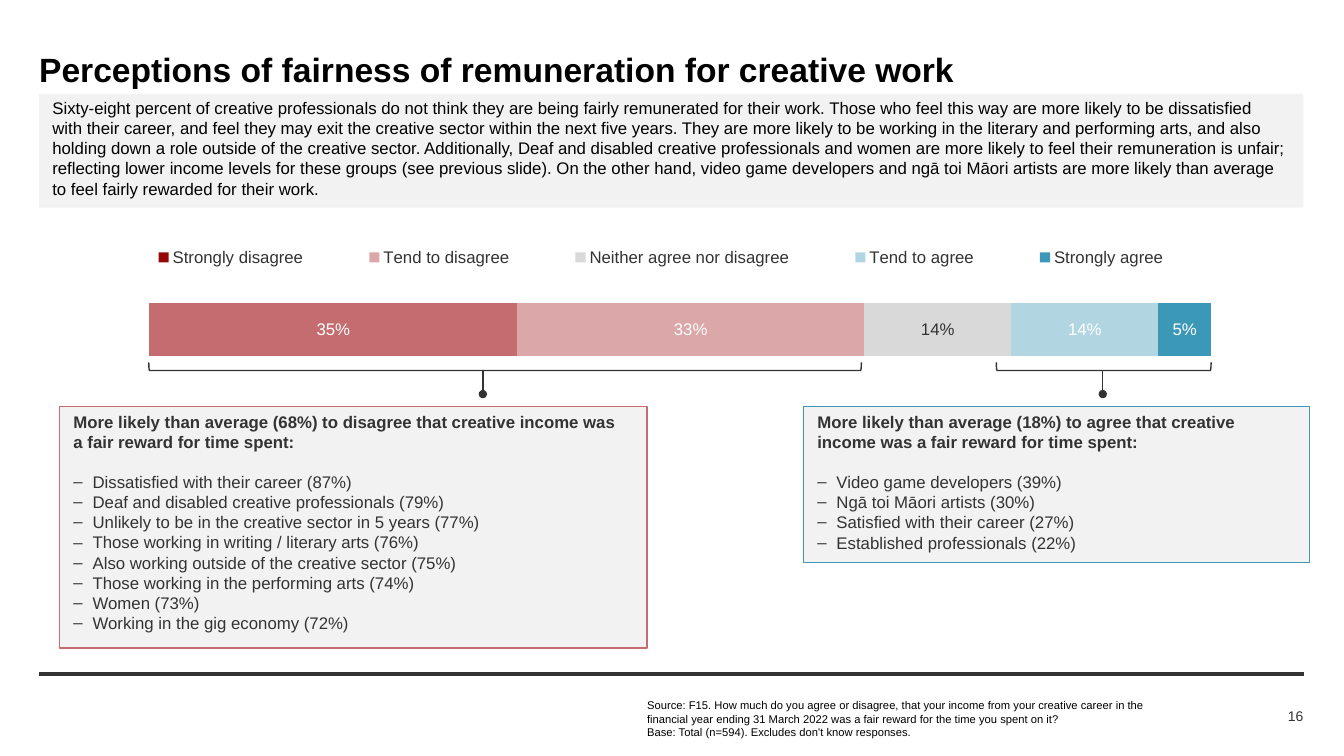
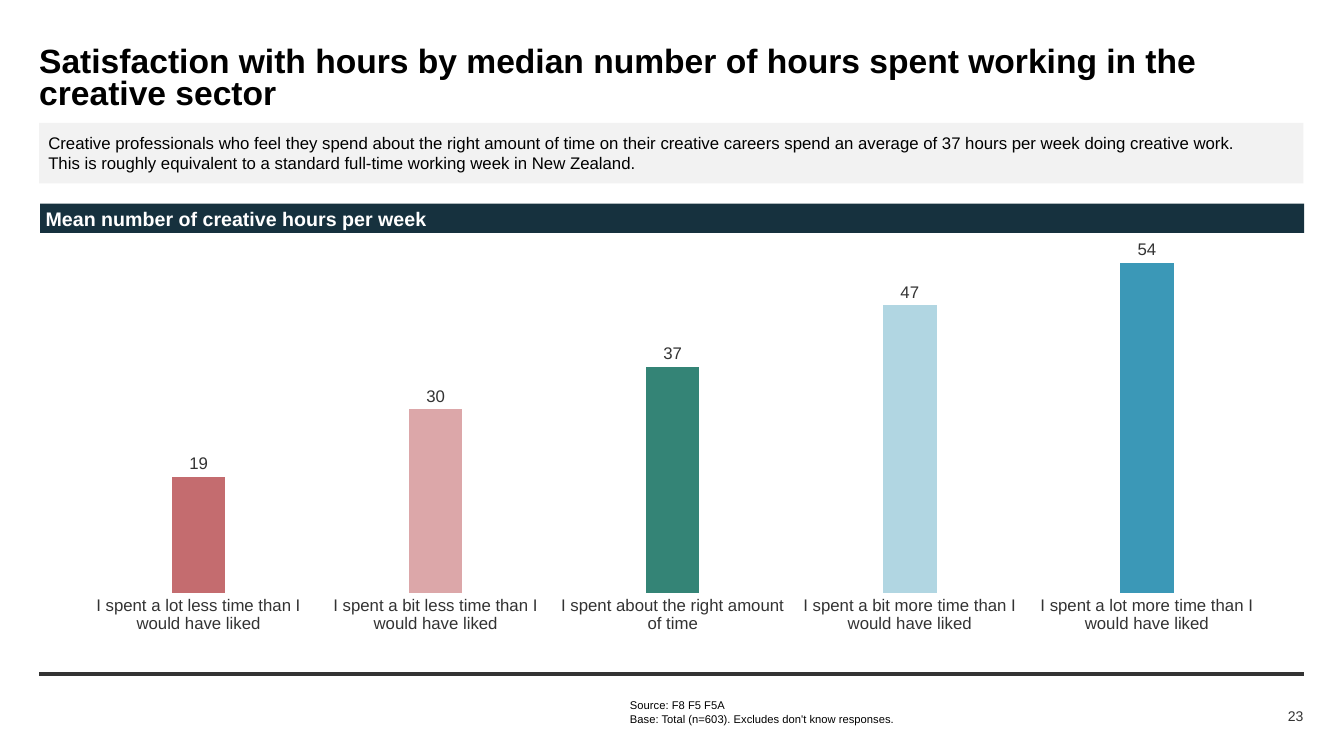
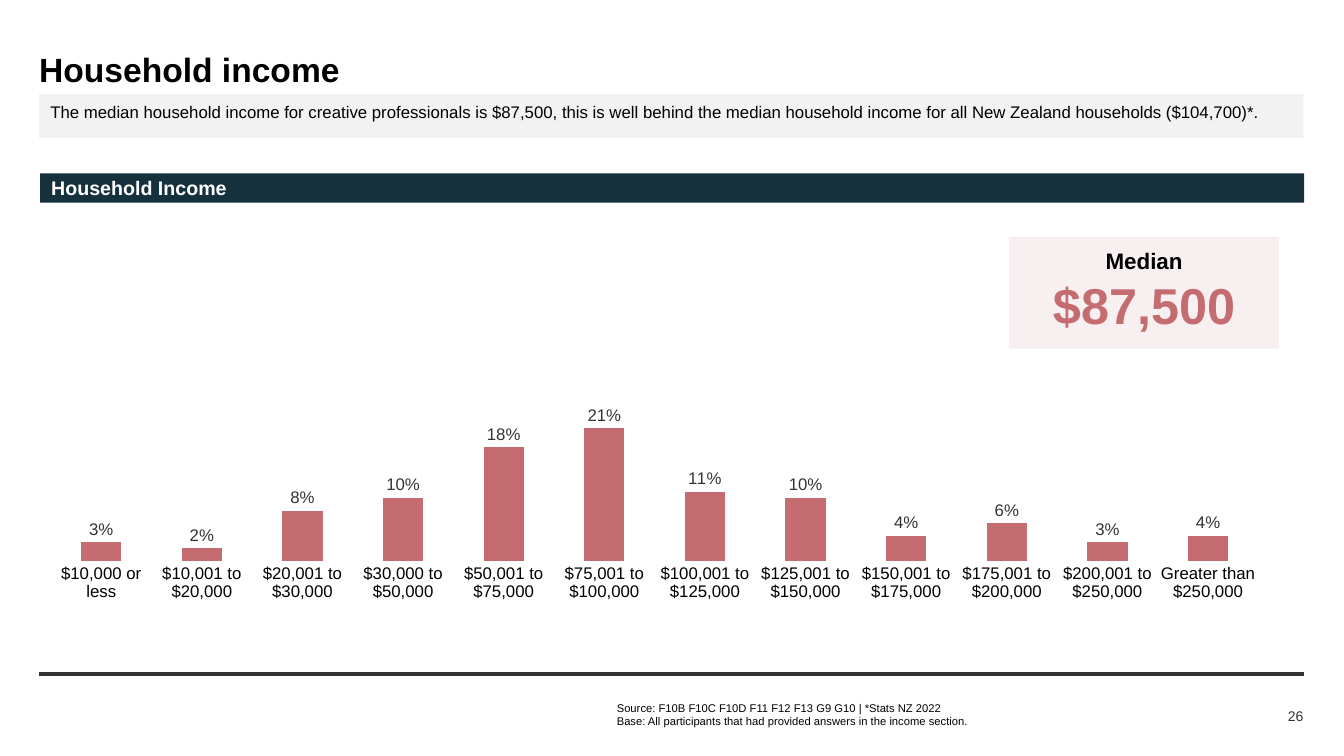
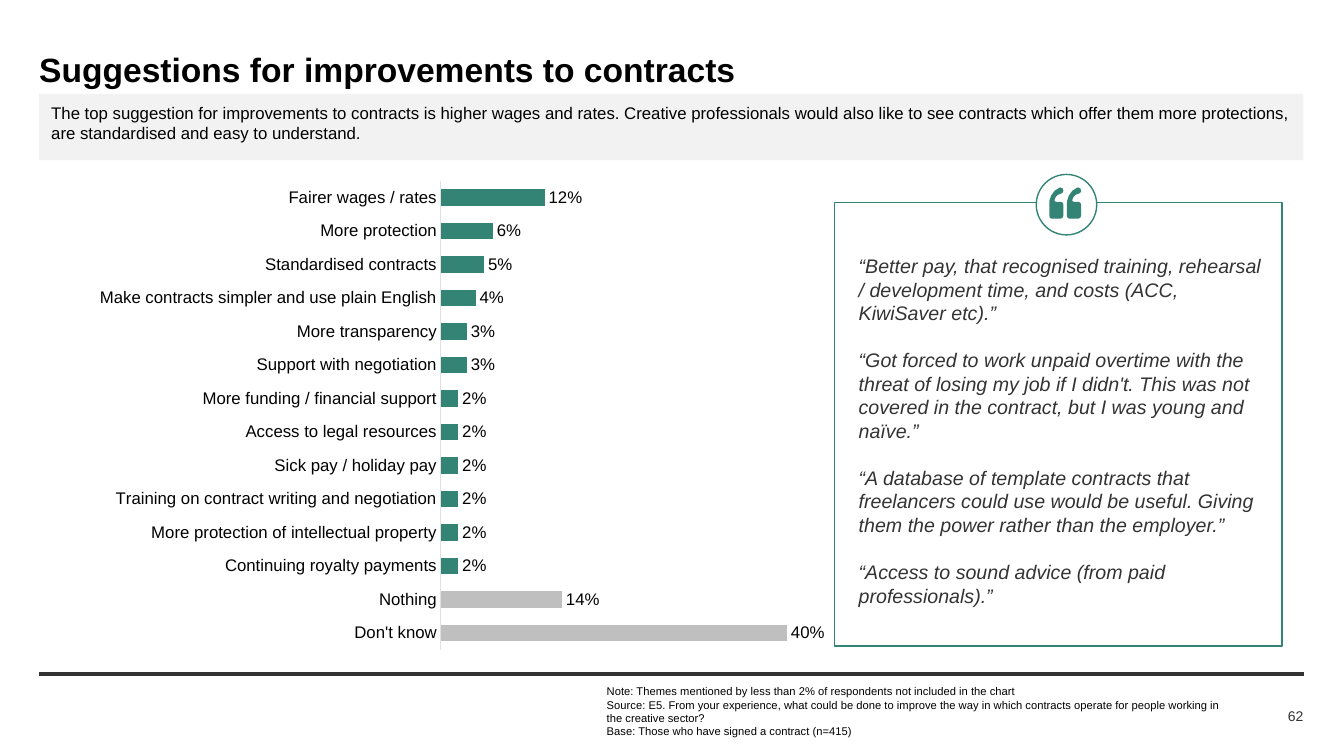
"""Build four slides on the pay, hours, income and contracts of creative professionals."""

from lxml.etree import SubElement
from pptx import Presentation
from pptx.chart.data import CategoryChartData
from pptx.dml.color import RGBColor
from pptx.enum.chart import XL_CHART_TYPE, XL_LABEL_POSITION, XL_LEGEND_POSITION, XL_TICK_MARK
from pptx.enum.shapes import MSO_CONNECTOR, MSO_SHAPE
from pptx.enum.text import MSO_ANCHOR, MSO_AUTO_SIZE, PP_ALIGN
from pptx.oxml import parse_xml
from pptx.oxml.ns import nsdecls, qn
from pptx.util import Pt

BLACK = RGBColor(0x00, 0x00, 0x00)
WHITE = RGBColor(0xFF, 0xFF, 0xFF)
CHARCOAL = RGBColor(0x33, 0x33, 0x33)
PALE_GREY = RGBColor(0xF2, 0xF2, 0xF2)
AXIS_GREY = RGBColor(0xE0, 0xE0, 0xE0)
LIGHT_GREY = RGBColor(0xD9, 0xD9, 0xD9)
MID_GREY = RGBColor(0xBF, 0xBF, 0xBF)
NAVY = RGBColor(0x16, 0x31, 0x3E)
DARK_RED = RGBColor(0x96, 0x08, 0x08)
ROSE = RGBColor(0xC4, 0x6C, 0x6F)
PINK = RGBColor(0xDC, 0xA7, 0xA9)
GREEN = RGBColor(0x34, 0x84, 0x76)
SKY = RGBColor(0xB1, 0xD6, 0xE2)
BLUE = RGBColor(0x3B, 0x98, 0xB7)

FONT = "Arial"
LEFT = 28
WIDTH = 903
TITLE_TOP = 33.8
TITLE_HEIGHT = 31.7
BODY_SIZE = 12
QUOTE_MARK = [
    (0, 280), (6, 300), (22, 310), (112, 310), (130, 302), (140, 282), (140, 170),
    (132, 150), (112, 142), (70, 142), (56, 138), (52, 128), (62, 98), (84, 74),
    (120, 60), (136, 48), (140, 30), (132, 8), (112, 0), (100, 2), (54, 32),
    (18, 82), (2, 130), (0, 160),
]
QUOTE_MARK_STEP = 176


def points(*values):
    """Return the values as lengths in points."""
    return [Pt(value) for value in values]


def assign(target, values):
    """Set each named attribute of the target."""
    for name, value in values.items():
        setattr(target, name, value)


def set_font(font, size, color, **values):
    """Give a font the deck's typeface with a size, a colour and extras."""
    assign(font, {"name": FONT, "size": Pt(size), **values})
    font.color.rgb = color


def write(shape, lines, size=BODY_SIZE, color=BLACK, insets=(0, 0, 0, 0),
          anchor=MSO_ANCHOR.TOP, paragraph_format=None, gap=0, **font_values):
    """Write one paragraph per line and return the paragraphs."""
    left, top, right, bottom = points(*insets)
    frame = shape.text_frame
    assign(frame, {
        "word_wrap": True, "auto_size": MSO_AUTO_SIZE.NONE, "vertical_anchor": anchor,
        "margin_left": left, "margin_top": top, "margin_right": right, "margin_bottom": bottom,
    })
    for index, line in enumerate(lines):
        paragraph = frame.add_paragraph() if index else frame.paragraphs[0]
        assign(paragraph, {"alignment": PP_ALIGN.LEFT, **(paragraph_format or {})})
        if index and gap:
            paragraph.space_before = Pt(gap)
        run = paragraph.add_run()
        run.text = line
        set_font(run.font, size, color, **font_values)
    return frame.paragraphs


def add_text(slide, box, lines, **style):
    """Add a text box."""
    return write(slide.shapes.add_textbox(*points(*box)), lines, **style)


def add_preset(slide, preset, box, fill=None, line=None):
    """Add a flat preset shape with an optional fill and outline."""
    shape = slide.shapes.add_shape(preset, *points(*box))
    shape.shadow.inherit = False
    if fill is None:
        shape.fill.background()
    else:
        shape.fill.solid()
        shape.fill.fore_color.rgb = fill
    if line is None:
        shape.line.fill.background()
    else:
        shape.line.color.rgb = line
        shape.line.width = Pt(1)
    return shape


def add_line(slide, start, end, width, oval_head=False):
    """Add a straight charcoal line."""
    connector = slide.shapes.add_connector(MSO_CONNECTOR.STRAIGHT, *points(*start, *end))
    connector.line.color.rgb = CHARCOAL
    connector.line.width = Pt(width)
    properties = connector.element.spPr
    if oval_head:
        SubElement(properties.find(qn("a:ln")), qn("a:headEnd"), type="oval")
    SubElement(properties, qn("a:effectLst"))


def add_page(presentation, title, number, title_height=TITLE_HEIGHT, line_spacing=1.0):
    """Add a slide with its title, footer rule and page number."""
    slide = presentation.slides.add_slide(presentation.slide_layouts[6])
    add_line(slide, (LEFT, 481.7), (LEFT + WIDTH + 0.7, 481.7), 3)
    add_text(slide, (LEFT, TITLE_TOP, WIDTH, title_height), [title], size=24, bold=True,
             anchor=MSO_ANCHOR.MIDDLE, paragraph_format={"line_spacing": line_spacing})
    add_text(slide, (854.6, 503.3, 76.4, 15.8), [str(number)], size=10, color=CHARCOAL,
             anchor=MSO_ANCHOR.MIDDLE, paragraph_format={"alignment": PP_ALIGN.RIGHT})
    return slide


def add_intro(slide, top, height, text, insets):
    """Add the grey summary band under the title."""
    band = add_preset(slide, MSO_SHAPE.RECTANGLE, (LEFT, top, WIDTH, height), PALE_GREY)
    write(band, [text], insets=insets)


def add_heading(slide, top, text, indent):
    """Add a navy heading band."""
    band = add_preset(slide, MSO_SHAPE.RECTANGLE, (LEFT + 0.6, top, WIDTH, 20.9), NAVY)
    write(band, [text], size=14, color=WHITE, insets=(indent, 0, 0, 0),
          anchor=MSO_ANCHOR.MIDDLE, bold=True)


def add_source(slide, left, top, width, lines):
    """Add the source note below the footer rule."""
    add_text(slide, (left, top, width, 20), lines, size=8)


def add_callout(slide, box, line, heading, items):
    """Add an outlined box with a bold heading and dashed items."""
    shape = add_preset(slide, MSO_SHAPE.RECTANGLE, box, PALE_GREY, line)
    paragraphs = write(shape, [heading, *items], color=CHARCOAL, insets=(10, 3.6, 14.4, 3.6))
    paragraphs[0].runs[0].font.bold = True
    paragraphs[1].space_before = Pt(14.4)
    for paragraph in paragraphs[1:]:
        properties = paragraph._p.get_or_add_pPr()
        properties.set("marL", str(Pt(13.7)))
        properties.set("indent", str(Pt(-13.7)))
        SubElement(properties, qn("a:buFont"), typeface=FONT)
        SubElement(properties, qn("a:buChar"), char="‒")


def add_bracket(slide, left, top, width, height, stem):
    """Add a bracket open at the top, with a dotted stem below it."""
    box = (left + (width - height) / 2, top - (width - height) / 2, height, width)
    bracket = add_preset(slide, MSO_SHAPE.LEFT_BRACKET, box, line=CHARCOAL)
    bracket.rotation = 270
    add_line(slide, (stem, 281.5), (stem, top + height), 1, oval_head=True)


def set_layout(parent, index, box, inner=False):
    """Place a chart part by fractions of the chart area."""
    for layout in parent.findall(qn("c:layout")):
        parent.remove(layout)
    target = '<c:layoutTarget val="inner"/>' if inner else ""
    modes = '<c:xMode val="edge"/><c:yMode val="edge"/>'
    sizes = "".join(f'<c:{name} val="{value}"/>' for name, value in zip("xywh", box))
    parent.insert(index, parse_xml(
        f'<c:layout {nsdecls("c")}><c:manualLayout>{target}{modes}{sizes}'
        "</c:manualLayout></c:layout>"))


def fill_bars(target, color):
    """Fill a series or a single point."""
    target.format.fill.solid()
    target.format.fill.fore_color.rgb = color


def add_bars(slide, kind, box, plot_box, categories, series, gap, number_format="0%",
             maximum=None, label_position=XL_LABEL_POSITION.OUTSIDE_END):
    """Add a bar chart; each series is a name, values, colour and label colour."""
    data = CategoryChartData(number_format=number_format)
    data.categories = categories
    for name, values, _, _ in series:
        data.add_series(name, values)
    chart = slide.shapes.add_chart(kind, *points(*box), data).chart
    assign(chart, {"has_title": False, "has_legend": False})
    set_font(chart.font, 10, CHARCOAL)
    set_layout(chart.element.xpath("c:chart/c:plotArea")[0], 0, plot_box, inner=True)
    assign(chart.value_axis, {"visible": False, "has_major_gridlines": False,
                              "minimum_scale": 0, "maximum_scale": maximum})
    chart.category_axis.major_tick_mark = XL_TICK_MARK.NONE
    chart.category_axis.format.line.fill.background()
    set_font(chart.category_axis.tick_labels.font, BODY_SIZE, CHARCOAL)
    plot = chart.plots[0]
    assign(plot, {"vary_by_categories": False, "gap_width": gap})
    for item, (_, _, color, label_color) in zip(plot.series, series):
        fill_bars(item, color)
        assign(item.data_labels, {
            "show_value": True, "number_format": number_format,
            "number_format_is_linked": False, "position": label_position})
        set_font(item.data_labels.font, BODY_SIZE, label_color)
    return chart


def color_points(chart, colors):
    """Recolour points of the first series by index."""
    for index, color in colors.items():
        fill_bars(chart.plots[0].series[0].points[index], color)


def add_quote_badge(slide):
    """Add the round badge with a pair of quotation marks."""
    add_preset(slide, MSO_SHAPE.OVAL, (740.2, 124.6, 43.2, 43.2), WHITE, GREEN)
    first, *rest = QUOTE_MARK
    builder = slide.shapes.build_freeform(*first, scale=Pt(0.072))
    builder.add_line_segments(rest)
    builder.move_to(first[0] + QUOTE_MARK_STEP, first[1])
    builder.add_line_segments([(x + QUOTE_MARK_STEP, y) for x, y in rest])
    marks = builder.convert_to_shape(*points(749.5, 133.9))
    marks.shadow.inherit = False
    marks.fill.solid()
    marks.fill.fore_color.rgb = GREEN
    marks.line.fill.background()


def build_fairness(presentation):
    """Build the slide on fair remuneration."""
    slide = add_page(presentation, "Perceptions of fairness of remuneration for creative work", 16)
    add_intro(slide, 67, 81.4, (
        "Sixty-eight percent of creative professionals do not think they are being fairly "
        "remunerated for their work. Those who feel this way are more likely to be dissatisfied "
        "with their career, and feel they may exit the creative sector within the next five "
        "years. They are more likely to be working in the literary and performing arts, and also "
        "holding down a role outside of the creative sector. Additionally, Deaf and disabled "
        "creative professionals and women are more likely to feel their remuneration is unfair; "
        "reflecting lower income levels for these groups (see previous slide). On the other "
        "hand, video game developers and ngā toi Māori artists are more likely than average to "
        "feel fairly rewarded for their work."), (9.4, 2.8, 11, 0))
    chart = add_bars(
        slide, XL_CHART_TYPE.BAR_STACKED_100, (24.5, 110.9, 913.7, 331.9),
        (0.09, 0.14, 0.83, 0.47), ["1"], [
            ("Strongly disagree", [0.35], DARK_RED, WHITE),
            ("Tend to disagree", [0.33], PINK, WHITE),
            ("Neither agree nor disagree", [0.14], LIGHT_GREY, CHARCOAL),
            ("Tend to agree", [0.14], SKY, WHITE),
            ("Strongly agree", [0.05], BLUE, WHITE),
        ], 308, label_position=XL_LABEL_POSITION.CENTER)
    color_points(chart, {0: ROSE})
    chart.plots[0].overlap = 100
    chart.category_axis.visible = False
    chart.has_legend = True
    assign(chart.legend, {"position": XL_LEGEND_POSITION.TOP, "include_in_layout": False})
    set_font(chart.legend.font, BODY_SIZE, CHARCOAL)
    set_layout(chart.element.xpath("c:chart/c:legend")[0], 1, (0.05, 0.14, 0.88, 0.16))
    add_bracket(slide, 106.3, 258.8, 509, 5.8, 344.9)
    add_bracket(slide, 711.7, 258.8, 153.4, 5.8, 787.7)
    add_callout(
        slide, (42.5, 290.2, 419.8, 172.8), ROSE,
        "More likely than average (68%) to disagree that creative income was a fair reward "
        "for time spent:", [
            "Dissatisfied with their career (87%)",
            "Deaf and disabled creative professionals (79%)",
            "Unlikely to be in the creative sector in 5 years (77%)",
            "Those working in writing / literary arts (76%)",
            "Also working outside of the creative sector (75%)",
            "Those working in the performing arts (74%)",
            "Women (73%)",
            "Working in the gig economy (72%)",
        ])
    add_callout(
        slide, (573.8, 290.2, 361.4, 111.6), BLUE,
        "More likely than average (18%) to agree that creative income was a fair reward "
        "for time spent:", [
            "Video game developers (39%)",
            "Ngā toi Māori artists (30%)",
            "Satisfied with their career (27%)",
            "Established professionals (22%)",
        ])
    add_source(slide, 462.2, 499, 361, [
        "Source: F15. How much do you agree or disagree, that your income from your creative "
        "career in the financial year ending 31 March 2022 was a fair reward for the time you "
        "spent on it?",
        "Base: Total (n=594). Excludes don't know responses."])


def build_hours(presentation):
    """Build the slide on hours worked."""
    slide = add_page(
        presentation, "Satisfaction with hours by median number of hours spent working in the "
        "creative sector", 23, title_height=46.8, line_spacing=0.8)
    add_intro(slide, 87.8, 43.2, (
        "Creative professionals who feel they spend about the right amount of time on their "
        "creative careers spend an average of 37 hours per week doing creative work. This is "
        "roughly equivalent to a standard full-time working week in New Zealand."),
        (6.5, 7.2, 42.5, 0))
    chart = add_bars(
        slide, XL_CHART_TYPE.COLUMN_CLUSTERED, (39.6, 155.5, 882, 301),
        (0.02, 0.02, 0.96, 0.87), [
            "I spent a lot more time than I would have liked",
            "I spent a bit more time than I would have liked",
            "I spent about the right amount of time",
            "I spent a bit less time than I would have liked",
            "I spent a lot less time than I would have liked",
        ], [("Series 1", [54, 47, 37, 30, 19], BLUE, CHARCOAL)], 344, "#,##0", maximum=60)
    color_points(chart, dict(enumerate([BLUE, SKY, GREEN, PINK, ROSE])))
    chart.category_axis.reverse_order = True
    add_heading(slide, 145.4, "Mean number of creative hours per week", 4)
    add_source(slide, 450, 499, 361, [
        "Source: F8 F5 F5A", "Base: Total (n=603). Excludes don't know responses."])


def build_income(presentation):
    """Build the slide on household income."""
    slide = add_page(presentation, "Household income", 26)
    add_intro(slide, 67, 31.7, (
        "The median household income for creative professionals is $87,500, this is well behind "
        "the median household income for all New Zealand households ($104,700)*."),
        (8, 5.8, 0, 0))
    limits = ["10,000", "20,000", "30,000", "50,000", "75,000", "100,000", "125,000",
              "150,000", "175,000", "200,000", "250,000"]
    starts = ["10,001", "20,001", "30,000", "50,001", "75,001", "100,001", "125,001",
              "150,001", "175,001", "200,001"]
    ranges = [f"${start} to ${limit}" for start, limit in zip(starts, limits[1:])]
    chart = add_bars(
        slide, XL_CHART_TYPE.COLUMN_CLUSTERED, (-13.7, 160.6, 927.4, 296.6),
        (0.054, 0.049, 0.93, 0.761),
        [f"${limits[0]} or less", *ranges, f"Greater than ${limits[-1]}"],
        [("Series 1", [0.03, 0.02, 0.08, 0.1, 0.18, 0.21, 0.11, 0.1, 0.04, 0.06, 0.03, 0.04],
          ROSE, CHARCOAL)], 150, maximum=0.5)
    chart.category_axis.tick_labels.font.color.rgb = BLACK
    panel = add_preset(slide, MSO_SHAPE.RECTANGLE, (720.7, 169.2, 193, 79.9), ROSE)
    color = panel.element.xpath("./p:spPr/a:solidFill/a:srgbClr")[0]
    SubElement(color, qn("a:alpha"), val="10000")
    median = write(panel, ["Median", "$87,500"], size=16, insets=(0, 7.2, 0, 0), bold=True,
                   paragraph_format={"alignment": PP_ALIGN.CENTER})
    set_font(median[1].runs[0].font, 36, ROSE)
    add_heading(slide, 123.8, "Household Income", 8)
    add_source(slide, 440.6, 501, 490, [
        "Source: F10B F10C F10D F11 F12 F13 G9 G10 | *Stats NZ 2022",
        "Base: All participants that had provided answers in the income section."])


def build_contracts(presentation):
    """Build the slide on improving contracts."""
    slide = add_page(presentation, "Suggestions for improvements to contracts", 62)
    add_intro(slide, 67, 47.5, (
        "The top suggestion for improvements to contracts is higher wages and rates. Creative "
        "professionals would also like to see contracts which offer them more protections, are "
        "standardised and easy to understand."), (8.6, 6.4, 0, 0))
    suggestions = {
        "Fairer wages / rates": 0.12,
        "More protection": 0.06,
        "Standardised contracts": 0.05,
        "Make contracts simpler and use plain English": 0.04,
        "More transparency": 0.03,
        "Support with negotiation": 0.03,
        "More funding / financial support": 0.02,
        "Access to legal resources": 0.02,
        "Sick pay / holiday pay": 0.02,
        "Training on contract writing and negotiation": 0.02,
        "More protection of intellectual property": 0.02,
        "Continuing royalty payments": 0.02,
        "Nothing": 0.14,
        "Don't know": 0.4,
    }
    chart = add_bars(
        slide, XL_CHART_TYPE.BAR_CLUSTERED, (-13.7, 119.5, 753.8, 357.1),
        (0.436, 0.027, 0.369, 0.938), list(suggestions),
        [("Series 1", list(suggestions.values()), GREEN, BLACK)], 102, maximum=0.45)
    color_points(chart, {12: MID_GREY, 13: MID_GREY})
    axis = chart.category_axis
    axis.reverse_order = True
    axis.tick_labels.font.color.rgb = BLACK
    axis.format.line.color.rgb = AXIS_GREY
    axis.format.line.width = Pt(0.75)
    add_preset(slide, MSO_SHAPE.RECTANGLE, (596.2, 144.7, 319.7, 316.8), line=GREEN)
    add_text(slide, (613.4, 181.4, 288.8, 258.5), [
        "“Better pay, that recognised training, rehearsal / development time, and costs (ACC, "
        "KiwiSaver etc).”",
        "“Got forced to work unpaid overtime with the threat of losing my job if I didn't. This "
        "was not covered in the contract, but I was young and naïve.”",
        "“A database of template contracts that freelancers could use would be useful. Giving "
        "them the power rather than the employer.”",
        "“Access to sound advice (from paid professionals).”",
    ], size=14, color=CHARCOAL, gap=16.8, italic=True)
    add_quote_badge(slide)
    add_source(slide, 433.4, 489, 445.7, [
        "Note: Themes mentioned by less than 2% of respondents not included in the chart",
        "Source: E5. From your experience, what could be done to improve the way in which "
        "contracts operate for people working in the creative sector?",
        "Base: Those who have signed a contract (n=415)"])


def main():
    """Build and save the presentation."""
    presentation = Presentation()
    assign(presentation, {"slide_width": Pt(960), "slide_height": Pt(540)})
    for build in (build_fairness, build_hours, build_income, build_contracts):
        build(presentation)
    presentation.save("out.pptx")


if __name__ == "__main__":
    main()
